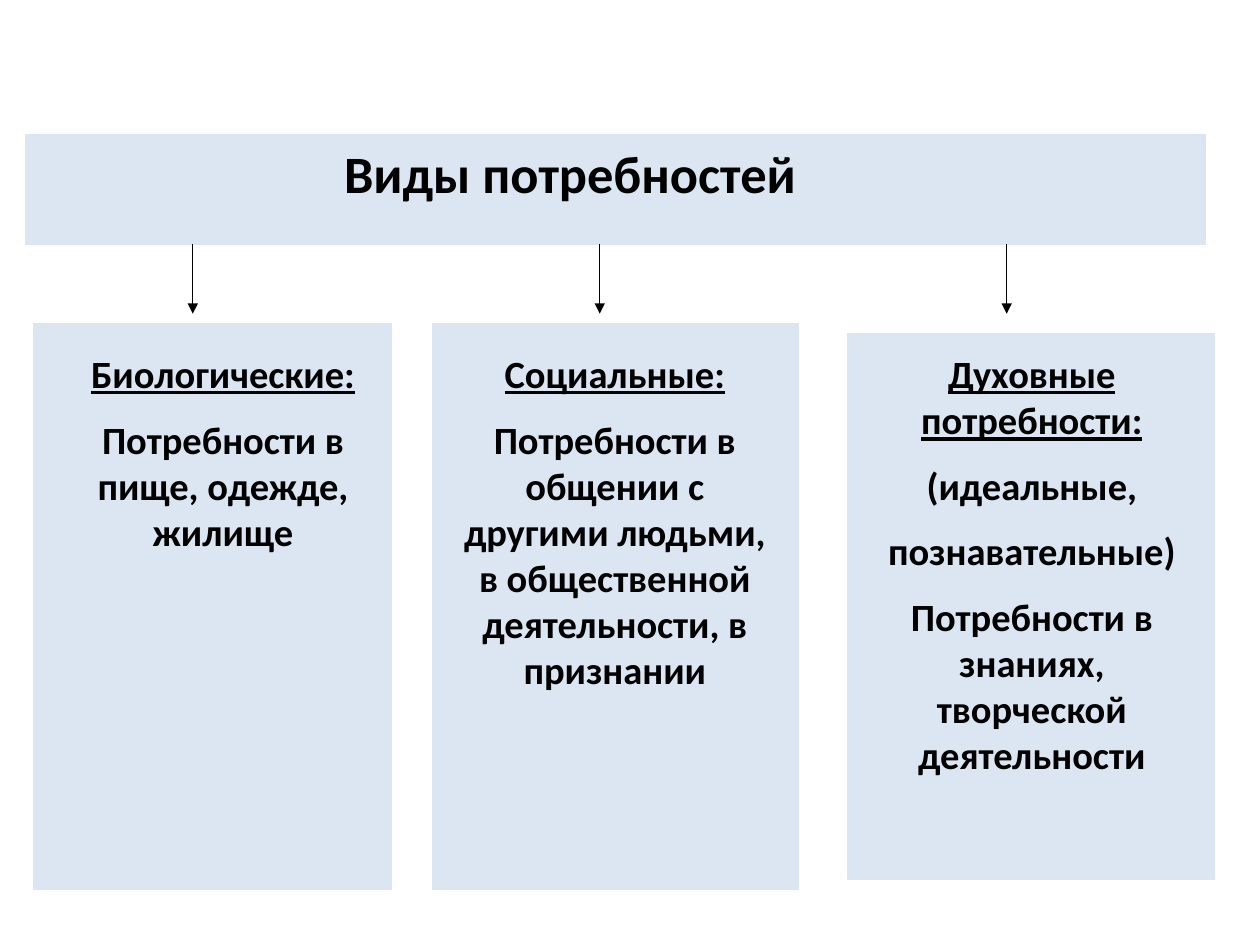
from dataclasses import dataclass

from lxml.etree import SubElement
from pptx import Presentation
from pptx.dml.color import RGBColor
from pptx.enum.shapes import MSO_CONNECTOR as Link, MSO_SHAPE as Shape
from pptx.enum.text import MSO_ANCHOR as Anchor, MSO_AUTO_SIZE as Fit, PP_ALIGN as Align
from pptx.oxml.ns import qn
from pptx.util import Inches, Pt

PALE = RGBColor(0xDC, 0xE6, 0xF2)
BLACK = RGBColor(0, 0, 0)
FONT = "Calibri"


@dataclass
class Box:
    left: float
    top: float
    width: float
    height: float

    def place(self) -> tuple:
        return tuple(map(Inches, (self.left, self.top, self.width, self.height)))


@dataclass
class Need:
    panel: Box
    label: Box
    lines: list[str]


NEEDS = [
    Need(Box(0.27, 2.57, 2.84, 4.49), Box(0.43, 2.73, 2.68, 1.77),
         ["Биологические:", "Потребности в пище, одежде, жилище"]),
    Need(Box(3.43, 2.57, 2.91, 4.49), Box(3.5, 2.73, 2.76, 3.33),
         ["Социальные:",
          "Потребности в общении с другими людьми, в общественной деятельности, в признании"]),
    Need(Box(6.73, 2.65, 2.91, 4.33), Box(6.81, 2.73, 2.76, 3.62),
         ["Духовные потребности:", "(идеальные,", "познавательные)",
          "Потребности в знаниях, творческой деятельности"]),
]


def add_panel(slide, box: Box):
    panel = slide.shapes.add_shape(Shape.RECTANGLE, *box.place())
    panel.shadow.inherit = False
    panel.fill.solid()
    panel.fill.fore_color.rgb = PALE
    panel.line.color.rgb = PALE
    panel.line.width = Pt(0.75)
    return panel


def set_text(shape, lines: list[str], size: float) -> None:
    frame = shape.text_frame
    frame.text = "\n".join(lines)
    frame.word_wrap = True
    frame.auto_size = Fit.SHAPE_TO_FIT_TEXT
    frame.vertical_anchor = Anchor.TOP
    for i, para in enumerate(frame.paragraphs):
        para.alignment = Align.CENTER
        para.space_before = Pt(size / 2 if i else 0)
        for run in para.runs:
            font = run.font
            font.name, font.size, font.bold = FONT, Pt(size), True
            font.color.rgb = BLACK


def add_need(slide, need: Need) -> None:
    add_panel(slide, need.panel)
    label = slide.shapes.add_textbox(*need.label.place())
    set_text(label, need.lines, 22)
    label.text_frame.paragraphs[0].runs[0].font.underline = True


def add_arrow(slide, x: float, top: float, end: float) -> None:
    arrow = slide.shapes.add_connector(
        Link.STRAIGHT, Inches(x), Inches(top), Inches(x), Inches(end))
    arrow.line.color.rgb = BLACK
    arrow.line.width = Pt(0.75)
    SubElement(arrow.line._get_or_add_ln(), qn("a:tailEnd"), type="triangle")
    SubElement(arrow.element.spPr, qn("a:effectLst"))


def main() -> None:
    deck = Presentation()
    deck.slide_width, deck.slide_height = Inches(10), Inches(7.5)
    slide = deck.slides.add_slide(deck.slide_layouts[5])

    # Title on its band
    title = slide.shapes.title
    title.left, title.top, title.width, title.height = Box(1.69, 1.07, 5.67, 0.61).place()
    set_text(title, ["Виды потребностей"], 30)
    band = add_panel(slide, Box(0.2, 1.07, 9.37, 0.87))
    title.element.addprevious(band.element)

    # Kinds of needs
    for need in NEEDS:
        add_need(slide, need)

    # Arrows from the band to each kind
    for i in range(len(NEEDS)):
        add_arrow(slide, 1.53 + 3.23 * i, 1.94, 2.49)

    deck.save("out.pptx")


if __name__ == "__main__":
    main()
